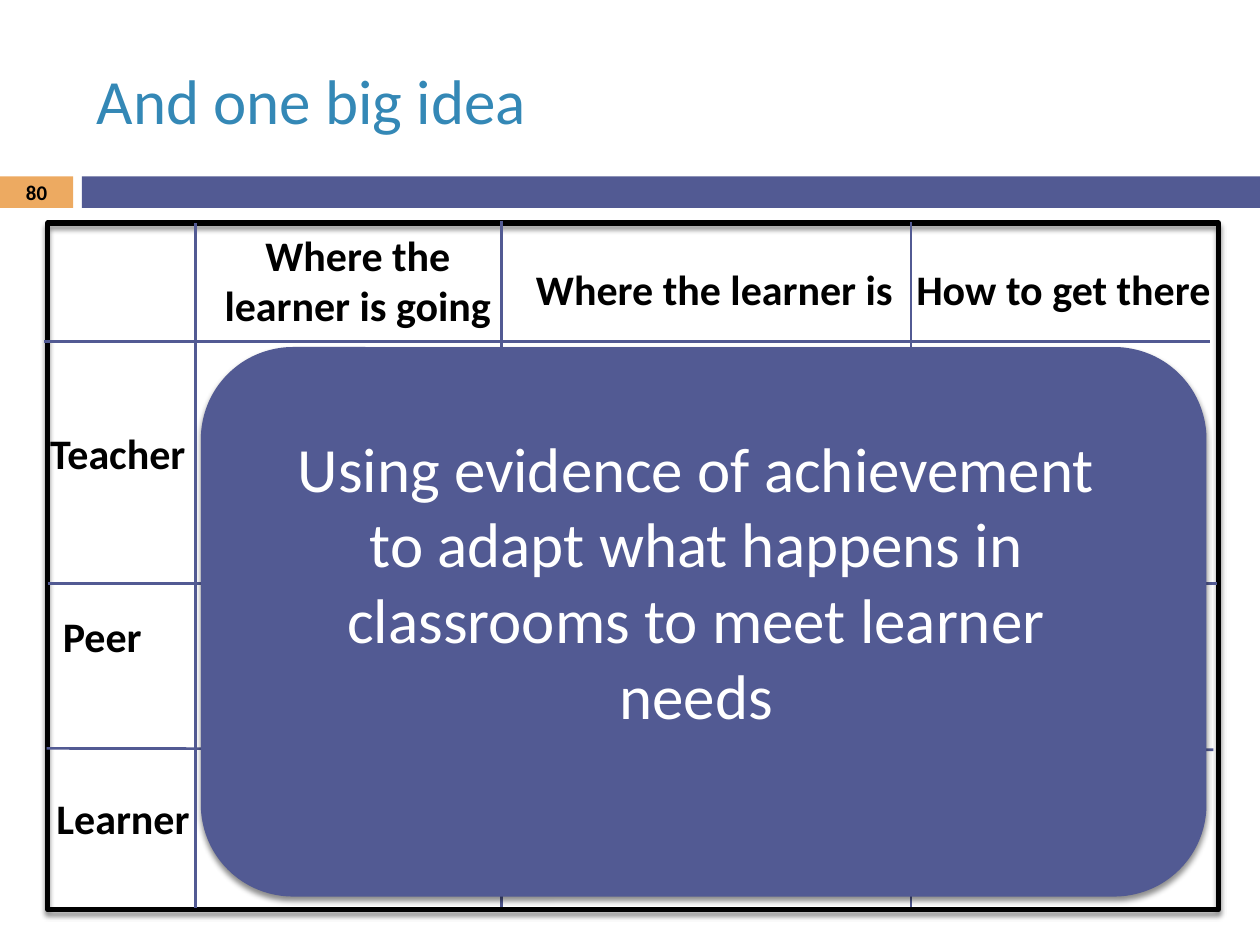
from typing import NamedTuple, Optional

from lxml import etree
from pptx import Presentation
from pptx import util as u
from pptx.dml.color import RGBColor
from pptx.enum import shapes, text
from pptx.oxml import parse_xml
from pptx.oxml.ns import nsdecls, qn

COLOURS = {
    "indigo": "525A93",
    "orange": "EDAA61",
    "blue": "3488B6",
    "black": "000000",
    "white": "FFFFFF",
}
FONT = "Calibri"
LEFT, CENTER = text.PP_ALIGN.LEFT, text.PP_ALIGN.CENTER
TOP, MIDDLE = text.MSO_ANCHOR.TOP, text.MSO_ANCHOR.MIDDLE
RECT = shapes.MSO_SHAPE.RECTANGLE
ROUNDED = shapes.MSO_SHAPE.ROUNDED_RECTANGLE


class Area(NamedTuple):
    left: float
    top: float
    width: float
    height: float

    def lengths(self) -> list:
        return [u.Inches(value) for value in self]


class Label(NamedTuple):
    words: str
    area: Area
    size: float = 24
    colour: str = "black"
    bold: bool = True
    align: text.PP_ALIGN = CENTER
    anchor: text.MSO_ANCHOR = TOP
    wrap: bool = True


class Panel(NamedTuple):
    area: Area
    kind: shapes.MSO_SHAPE = RECT
    fill: Optional[str] = None
    line: Optional[str] = None
    weight: float = 1
    shadow: bool = False


class Rule(NamedTuple):
    x1: float
    y1: float
    x2: float
    y2: float


BARS = [
    Panel(Area(0, 1.4, 0.58, 0.25), fill="orange"),
    Panel(Area(0.65, 1.4, 9.35, 0.25), fill="indigo"),
]
FRAME = Panel(Area(0.38, 1.77, 9.29, 5.45), line="black", weight=3, shadow=True)
CARD = Panel(Area(1.6, 2.76, 7.97, 4.35), ROUNDED, "indigo", "indigo", 0.79, True)
CARD_TEXT = Panel(Area(2.07, 3.19, 6.91, 3.46), ROUNDED)

GRID_RULES = [
    Rule(0.35, 2.71, 9.6, 2.71),
    Rule(0.38, 4.63, 9.66, 4.63),
    Rule(3.98, 1.75, 3.98, 7.2),
    Rule(0.37, 5.94, 9.63, 5.95),
    Rule(1.55, 1.77, 1.55, 7.21),
    Rule(7.23, 1.76, 7.23, 7.2),
]

TITLE = Label("And one big idea", Area(0.67, 0.25, 8.92, 1.08), 36, "blue", False, LEFT, MIDDLE)
GRID_LABELS = [
    Label("Where the learner is going", Area(1.48, 1.77, 2.72, 0.91)),
    Label("Where the learner is", Area(4.14, 2.04, 3.06, 0.5), wrap=False),
    Label("How to get there", Area(7.16, 2.04, 2.56, 0.5), wrap=False),
    Label("Teacher", Area(0.3, 3.34, 1.29, 0.5), align=LEFT, wrap=False),
    Label("Peer", Area(0.4, 4.8, 0.98, 0.5), align=LEFT),
    Label("Learner", Area(0.35, 6.24, 1.27, 0.5), align=LEFT, wrap=False),
]
PAGE_NUMBER = Label("80", Area(0, 1.39, 0.58, 0.27), 11.9, anchor=MIDDLE)
BIG_IDEA = Label(
    "Using evidence of achievement to adapt what happens in classrooms to meet learner needs",
    CARD_TEXT.area, 36, "white", False,
)


def rgb(name: str) -> RGBColor:
    """Return the named colour."""
    return RGBColor.from_string(COLOURS[name])


def add_shadow(shape) -> None:
    """Give the shape a soft shadow falling straight down."""
    effects = shape._element.spPr.find(qn("a:effectLst"))
    effects.append(parse_xml(
        f'<a:outerShdw {nsdecls("a")} blurRad="{u.Pt(3)}" dist="{u.Pt(2.4)}" '
        f'dir="5400000" rotWithShape="0"><a:srgbClr val="{COLOURS["black"]}">'
        '<a:alpha val="45000"/></a:srgbClr></a:outerShdw>'
    ))


def add_panel(page, panel: Panel):
    """Draw a preset shape and return it."""
    shape = page.shapes.add_shape(panel.kind, *panel.area.lengths())
    shape.shadow.inherit = False
    if panel.fill:
        shape.fill.solid()
        shape.fill.fore_color.rgb = rgb(panel.fill)
    else:
        shape.fill.background()
    if panel.line:
        shape.line.color.rgb = rgb(panel.line)
        shape.line.width = u.Pt(panel.weight)
    else:
        shape.line.fill.background()
    if panel.shadow:
        add_shadow(shape)
    return shape


def add_rule(page, rule: Rule) -> None:
    """Draw one grid line."""
    ends = [u.Inches(value) for value in rule]
    line = page.shapes.add_connector(shapes.MSO_CONNECTOR.STRAIGHT, *ends)
    line.line.color.rgb = rgb("indigo")
    line.line.width = u.Pt(1.5)
    etree.SubElement(line._element.spPr, qn("a:effectLst"))


def write(box, label: Label) -> None:
    """Set and format the words of a box."""
    frame = box.text_frame
    frame.text = label.words
    frame.word_wrap = label.wrap
    frame.vertical_anchor = label.anchor
    para = frame.paragraphs[0]
    para.alignment = label.align
    font = para.runs[0].font
    font.name, font.size, font.bold = FONT, u.Pt(label.size), label.bold
    font.color.rgb = rgb(label.colour)


def add_label(page, label: Label) -> None:
    """Place a text box."""
    write(page.shapes.add_textbox(*label.area.lengths()), label)


def main() -> None:
    """Build the slide and save it."""
    deck = Presentation()
    deck.slide_width, deck.slide_height = u.Inches(10), u.Inches(7.5)
    page = deck.slides.add_slide(deck.slide_layouts[6])
    for bar in BARS:
        add_panel(page, bar)
    add_label(page, TITLE)
    add_panel(page, FRAME)
    for rule in GRID_RULES:
        add_rule(page, rule)
    for label in [*GRID_LABELS, PAGE_NUMBER]:
        add_label(page, label)
    add_panel(page, CARD)
    write(add_panel(page, CARD_TEXT), BIG_IDEA)
    deck.save("out.pptx")


if __name__ == "__main__":
    main()
